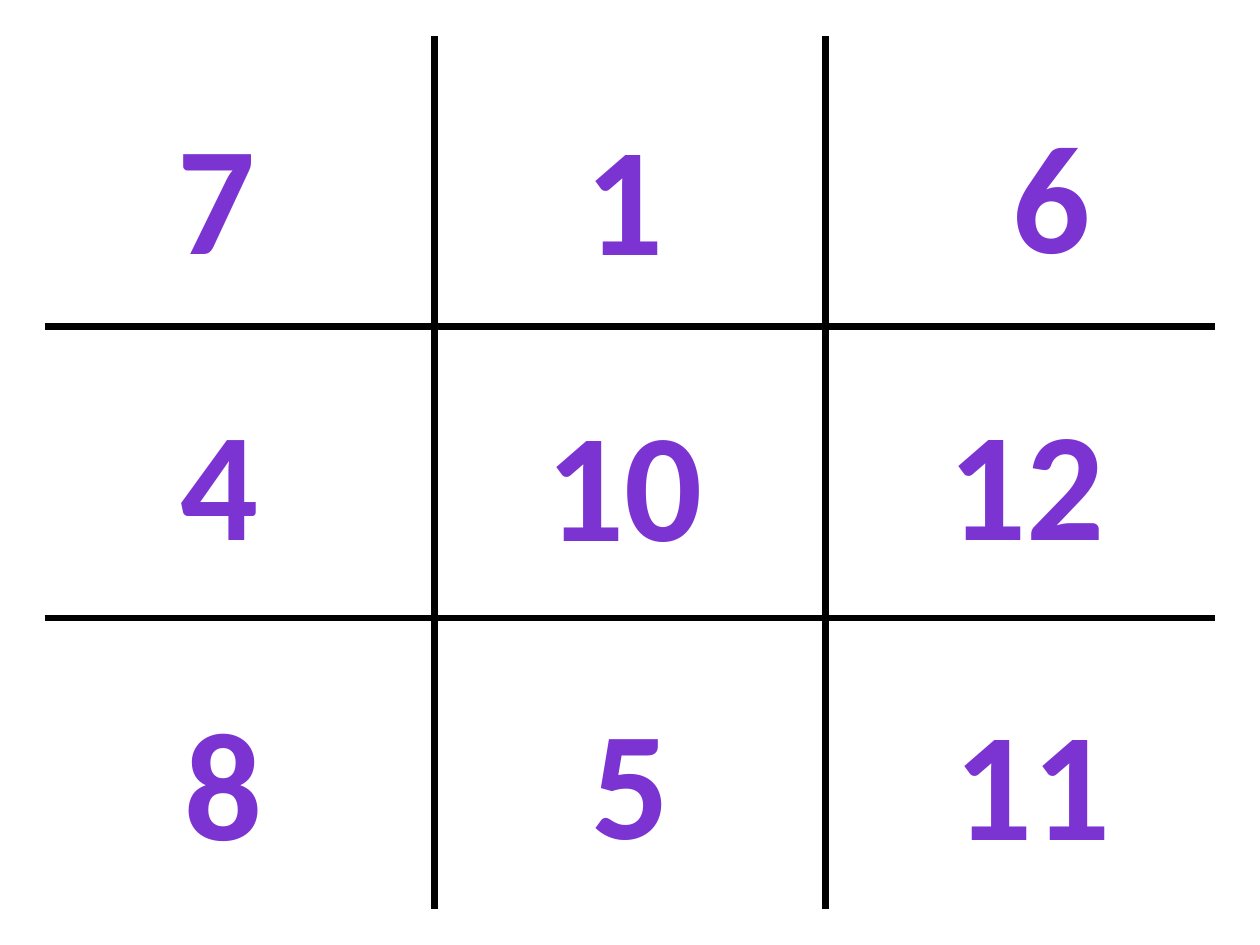
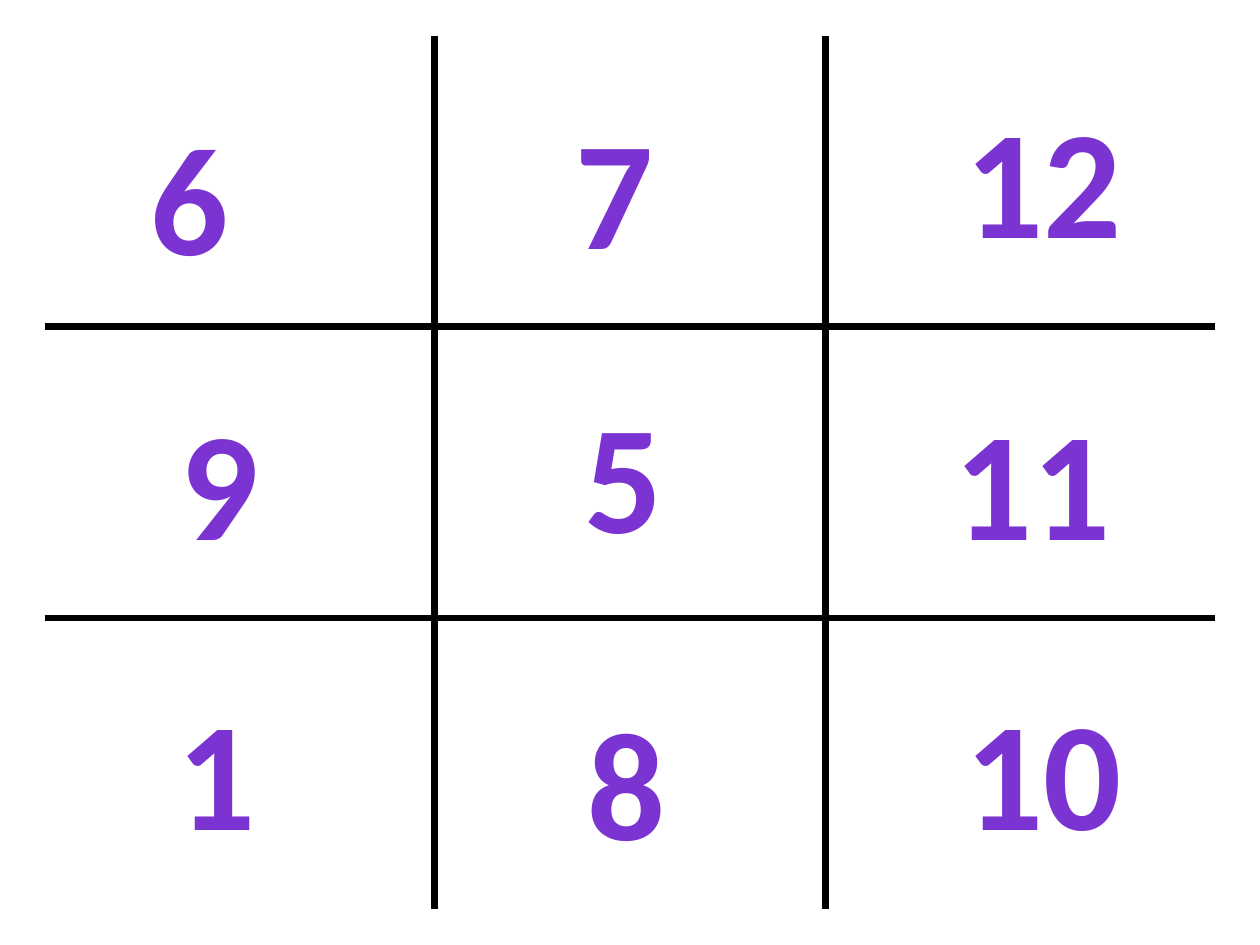
from lxml import etree
from pptx import Presentation
from pptx import util as u
from pptx.dml.color import RGBColor
from pptx.enum import text
from pptx.oxml import ns

PURPLE = RGBColor(0x7B, 0x34, 0xD2)
BLACK = RGBColor(0, 0, 0)
SIDE = 3  # cells along each side of the board

# Each number: text, centre column, top row
BOARDS = [
    [("7", 17.15, 7.5), ("1", 49.55, 7.6), ("6", 83.45, 7.4),
     ("4", 17.45, 30.2), ("10", 49.6, 30.3), ("12", 81.5, 30.2),
     ("8", 17.75, 54), ("5", 50.05, 53.9), ("11", 81.95, 54)],
    [("6", 15.05, 7.6), ("7", 48.75, 7.1), ("12", 82.8, 6.2),
     ("9", 17.45, 30.2), ("5", 49.45, 29.6), ("11", 81.95, 30.2),
     ("1", 17.15, 53.2), ("8", 49.75, 54), ("10", 82.8, 53.2)],
]


class Deck:
    """Slides laid out on a grid of 100 columns by 75 rows."""
    font = "Calibri"
    size = u.Pt(88)
    rule = u.Pt(4.5)

    def __init__(self):
        self.prs = Presentation()
        self.prs.slide_width = u.Inches(10)
        self.prs.slide_height = u.Inches(7.5)
        self.unit = self.prs.slide_width / 100
        self.slide = None

    def start(self):
        self.slide = self.prs.slides.add_slide(self.prs.slide_layouts[6])

    def place(self, *cells):
        return [round(cell * self.unit) for cell in cells]

    def edge(self, cell, side, shown):
        """Draw or hide one border of a table cell."""
        props = cell._tc.get_or_add_tcPr()
        line = etree.SubElement(props, ns.qn(f"a:ln{side}"), w=str(self.rule))
        if shown:
            fill = etree.SubElement(line, ns.qn("a:solidFill"))
            etree.SubElement(fill, ns.qn("a:srgbClr"), val=str(BLACK))
        else:
            etree.SubElement(line, ns.qn("a:noFill"))

    def board(self):
        """Add the table, ruled only between its cells."""
        box = self.place(3.55, 2.85, 92.9, 69.3)
        table = self.slide.shapes.add_table(SIDE, SIDE, *box).table
        table.first_row = table.horz_banding = False
        last = SIDE - 1
        for row in range(SIDE):
            for col in range(SIDE):
                cell = table.cell(row, col)
                inner = {"L": col > 0, "R": col < last,
                         "T": row > 0, "B": row < last}
                for side, shown in inner.items():
                    self.edge(cell, side, shown)
                cell.fill.background()

    def number(self, label, mid, top):
        width = 15.8 if len(label) > 1 else 8.9
        box = self.place(mid - width / 2, top, width, 15.8)
        frame = self.slide.shapes.add_textbox(*box).text_frame
        frame.word_wrap = False
        frame.auto_size = text.MSO_AUTO_SIZE.SHAPE_TO_FIT_TEXT
        para = frame.paragraphs[0]
        para.text = label
        para.alignment = text.PP_ALIGN.CENTER
        para.font.name = self.font
        para.font.size = self.size
        para.font.bold = True
        para.font.color.rgb = PURPLE


def main():
    deck = Deck()
    for numbers in BOARDS:
        deck.start()
        deck.board()
        for number in numbers:
            deck.number(*number)
    deck.prs.save("out.pptx")


if __name__ == "__main__":
    main()
